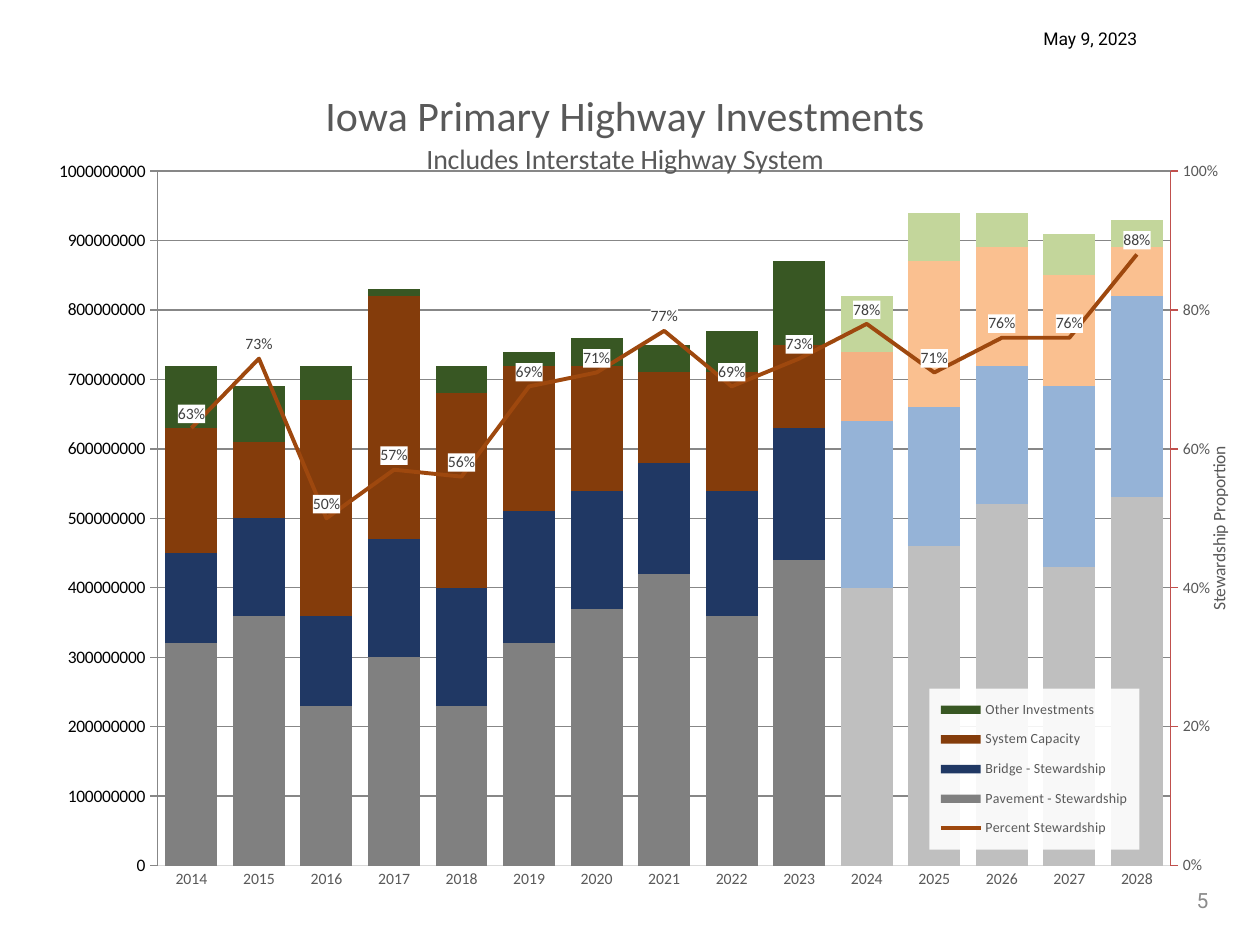
"""Build a slide with a combined chart of Iowa primary highway investments."""
from pptx import Presentation, util as u
from pptx.chart import axis as ax, data as cd
from pptx.dml.color import RGBColor
from pptx.enum import chart as ec, text as et
from pptx.oxml import parse_xml
from pptx.oxml.ns import nsdecls, qn

HUE = {"text": "595959", "label": "404040", "grid": "D9D9D9", "axis": "C0504D",
       "line": "9E480E", "white": "FFFFFF", "black": "000000", "page": "8C8C8C"}
YEARS = [str(y) for y in range(2014, 2029)]
PLAN = YEARS.index("2024")
MILLION = 10 ** 6
BARS = [
    ("Pavement - Stewardship", "808080", ["BFBFBF"] * 5,
     [320, 360, 230, 300, 230, 320, 370, 420, 360, 440, 400, 460, 520, 430, 530]),
    ("Bridge - Stewardship", "203864", ["95B3D7"] * 5,
     [130, 140, 130, 170, 170, 190, 170, 160, 180, 190, 240, 200, 200, 260, 290]),
    ("System Capacity", "843C0B", ["F4B183"] + ["FAC090"] * 4,
     [180, 110, 310, 350, 280, 210, 180, 130, 170, 120, 100, 210, 170, 160, 70]),
    ("Other Investments", "385723", ["C3D69B"] * 5,
     [90, 80, 50, 10, 40, 20, 40, 40, 60, 120, 80, 70, 50, 60, 40]),
]
SHARE = ("Percent Stewardship", [0.63, 0.73, 0.50, 0.57, 0.56, 0.69, 0.71, 0.77,
                                 0.69, 0.73, 0.78, 0.71, 0.76, 0.76, 0.88])
TITLE = [("Iowa Primary Highway Investments", 24),
         ("Includes Interstate Highway System", 16)]
NOTES = [
    ("May 9, 2023", (19.15, 0.43, 5.66, 0.69), 10, "black", et.PP_ALIGN.CENTER),
    ("5", (18.69, 17.63, 5.92, 1.02), 12, "page", et.PP_ALIGN.RIGHT),
]


def rgb(code):
    return RGBColor.from_string(code)


def style(font, size, hue, name="Calibri"):
    font.size, font.name, font.bold = u.Pt(size), name, False
    font.color.rgb = rgb(HUE[hue])


def paint(fill, code):
    fill.solid()
    fill.fore_color.rgb = rgb(code)


def stroke(line, hue, width=0.75):
    line.color.rgb = rgb(HUE[hue])
    line.width = u.Pt(width)


def place(part, spot, inner=False, **box):
    for old in part.findall(qn("c:layout")):
        part.remove(old)
    mode = '<c:layoutTarget val="inner"/>' if inner else ""
    mode += "".join(f'<c:{k}Mode val="edge"/>' for k in "xy")
    size = "".join(f'<c:{k} val="{v}"/>' for k, v in box.items())
    part.insert(spot, parse_xml(f'<c:layout {nsdecls("c")}><c:manualLayout>{mode}{size}'
                                '</c:manualLayout></c:layout>'))


def panel(alpha=100):
    return parse_xml(f'<c:spPr {nsdecls("c", "a")}><a:solidFill><a:srgbClr val="{HUE["white"]}">'
                     f'<a:alpha val="{alpha * 1000}"/></a:srgbClr></a:solidFill>'
                     '<a:ln><a:noFill/></a:ln></c:spPr>')


def write(title, lines, hue="text"):
    frame = title.text_frame
    frame.text = "\n".join(t for t, _ in lines)
    for para, (_, size) in zip(frame.paragraphs, lines):
        style(para.runs[0].font, size, hue)


def caption(axis, words, x, y):
    axis.has_title = True
    write(axis.axis_title, [(words, 10)])
    part = axis.axis_title._element
    body = part.find(".//" + qn("a:bodyPr"))
    body.set("rot", "-5400000")
    body.set("vert", "horz")
    place(part, 1, x=x, y=y)


def scale(axis, top, step, form, tick):
    axis.minimum_scale, axis.maximum_scale, axis.major_unit = 0, top, step
    axis.major_tick_mark, axis.minor_tick_mark = tick, ec.XL_TICK_MARK.NONE
    labels = axis.tick_labels
    labels.number_format, labels.number_format_is_linked = form, False
    style(labels.font, 9, "text")


def split(area):
    """Move the last series to a line plot and return its own value axis."""
    bars = area.find(qn("c:barChart"))
    ser = bars.findall(qn("c:ser"))[-1]
    for flag in ser.findall(qn("c:invertIfNegative")):
        ser.remove(flag)
    line = parse_xml(f'<c:lineChart {nsdecls("c")}><c:grouping val="standard"/>'
                     '<c:varyColors val="0"/><c:marker val="1"/>'
                     '<c:axId val="501"/><c:axId val="502"/></c:lineChart>')
    line.insert(2, ser)
    bars.addnext(line)
    last = area.findall(qn("c:valAx"))[-1]
    made = []
    for kind, own, other, gone, side, cross in [("valAx", 502, 501, 0, "r", "max"),
                                                ("catAx", 501, 502, 1, "b", "autoZero")]:
        made.append(parse_xml(
            f'<c:{kind} {nsdecls("c")}><c:axId val="{own}"/><c:scaling>'
            f'<c:orientation val="minMax"/></c:scaling><c:delete val="{gone}"/>'
            f'<c:axPos val="{side}"/><c:majorTickMark val="out"/>'
            '<c:minorTickMark val="none"/><c:tickLblPos val="nextTo"/>'
            f'<c:crossAx val="{other}"/><c:crosses val="{cross}"/></c:{kind}>'))
        last.addnext(made[-1])
    return ax.ValueAxis(made[0])


def draw(slide):
    data = cd.CategoryChartData()
    data.categories = YEARS
    for name, _, _, vals in BARS:
        data.add_series(name, [v * MILLION for v in vals])
    data.add_series(*SHARE)
    box = [u.Cm(n) for n in (0.48, 1.09, 24.41, 16.99)]
    chart = slide.shapes.add_chart(ec.XL_CHART_TYPE.COLUMN_STACKED, *box, data).chart
    style(chart.font, 10, "black")
    area = chart._chartSpace.find(".//" + qn("c:plotArea"))
    right = split(area)
    place(area, 0, True, x=0.111, y=0.139, w=0.84, h=0.824)

    chart.has_title = True
    write(chart.chart_title, TITLE)
    chart.chart_title.include_in_layout = True
    place(chart.chart_title._element, 1, x=0.247, y=0.038)

    bars, line = chart.plots
    bars.gap_width, bars.overlap, bars.vary_by_categories = 30, 100, False
    for ser, (_, code, pale, _) in zip(bars.series, BARS):
        ser.invert_if_negative = False
        paint(ser.format.fill, code)
        for i, tint in enumerate(pale, PLAN):
            paint(ser.points[i].format.fill, tint)

    share = line.series[0]
    share.smooth = False
    share.marker.style = ec.XL_MARKER_STYLE.NONE
    stroke(share.format.line, "line", 2.25)
    tags = share.data_labels
    tags.show_value, tags.position = True, ec.XL_LABEL_POSITION.ABOVE
    tags.number_format, tags.number_format_is_linked = "0%", False
    style(tags.font, 9, "label")
    tags._element.find(qn("c:txPr")).addprevious(panel())

    cat, left = chart.category_axis, chart.value_axis
    cat.major_tick_mark = ec.XL_TICK_MARK.NONE
    style(cat.tick_labels.font, 9, "text")
    stroke(cat.format.line, "grid")
    scale(left, 1000 * MILLION, 100 * MILLION, '"$"#,##0,,', ec.XL_TICK_MARK.NONE)
    left.format.line.fill.background()
    left.has_major_gridlines = True
    stroke(left.major_gridlines.format.line, "grid")
    caption(left, "Millions of Dollars", 0.038, 0.476)
    scale(right, 1, 0.2, "0%", ec.XL_TICK_MARK.OUTSIDE)
    stroke(right.format.line, "axis")
    caption(right, "Stewardship Proportion", 0.979, 0.461)

    chart.has_legend = True
    key = chart.legend
    key.position, key.include_in_layout = ec.XL_LEGEND_POSITION.LEFT, True
    style(key.font, 8, "text")
    place(key._element, 1, x=0.751, y=0.753, w=0.174, h=0.191)
    key._element.find(qn("c:txPr")).addprevious(panel(90))


def note(slide, words, box, size, hue, side):
    frame = slide.shapes.add_textbox(*[u.Cm(n) for n in box]).text_frame
    frame.word_wrap, frame.vertical_anchor = True, et.MSO_ANCHOR.MIDDLE
    frame.text = words
    para = frame.paragraphs[0]
    para.alignment = side
    style(para.runs[0].font, size, hue, "Roboto")


def main():
    deck = Presentation()
    deck.slide_width, deck.slide_height = u.Cm(25.4), u.Cm(19.05)
    slide = deck.slides.add_slide(deck.slide_layouts[6])
    draw(slide)
    for item in NOTES:
        note(slide, *item)
    deck.save("out.pptx")


if __name__ == "__main__":
    main()
